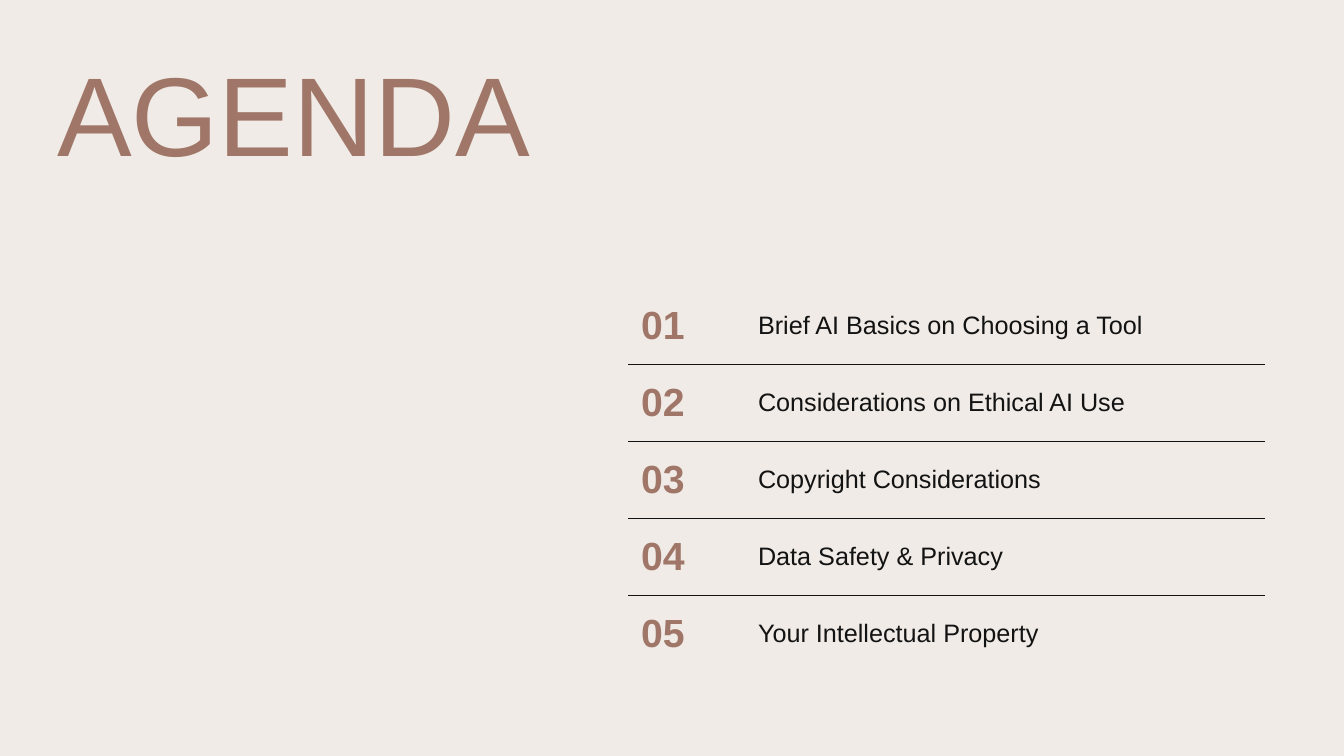
from lxml import etree
from pptx import Presentation
from pptx.dml.color import RGBColor
from pptx.enum.text import MSO_ANCHOR as Anchor
from pptx.oxml.ns import qn
from pptx.util import Pt

CREAM = RGBColor(0xF0, 0xEB, 0xE6)
CLAY = RGBColor(0x9F, 0x76, 0x67)
INK = RGBColor(0x13, 0x13, 0x13)
FONT = "Arial"

TOPICS = [
    "Brief AI Basics on Choosing a Tool",
    "Considerations on Ethical AI Use",
    "Copyright Considerations",
    "Data Safety & Privacy",
    "Your Intellectual Property",
]


def add_text(paragraph, text, size, color, bold=False):
    run = paragraph.add_run()
    run.text = text
    run.font.name = FONT
    run.font.size = Pt(size)
    run.font.bold = bold
    run.font.color.rgb = color


def set_borders(cell, ruled_sides):
    """Rule the given sides (T, B) and clear the others."""
    properties = cell._tc.get_or_add_tcPr()
    for position, side in enumerate("LRTB"):
        border = etree.Element(qn(f"a:ln{side}"), w=str(Pt(0.5)))
        if side in ruled_sides:
            fill = etree.SubElement(border, qn("a:solidFill"))
            etree.SubElement(fill, qn("a:srgbClr"), val=str(INK))
        else:
            etree.SubElement(border, qn("a:noFill"))
        properties.insert(position, border)


def add_title(slide, left, top, width, height):
    frame = slide.shapes.add_textbox(Pt(left), Pt(top), Pt(width), Pt(height)).text_frame
    frame.word_wrap = True
    frame.vertical_anchor = Anchor.TOP
    frame.margin_top = Pt(10)
    heading = frame.paragraphs[0]
    heading.line_spacing = 0.9
    add_text(heading, "AGENDA", 80, CLAY)


def add_agenda(slide, left, top, width, height):
    agenda = slide.shapes.add_table(
        len(TOPICS), 2, Pt(left), Pt(top), Pt(width), Pt(height)).table
    agenda.first_row = agenda.horz_banding = False
    number_width = 83.5
    agenda.columns[0].width = Pt(number_width)
    agenda.columns[1].width = Pt(width - number_width)

    for index, topic in enumerate(TOPICS):
        agenda.rows[index].height = Pt(height / len(TOPICS))
        # Rules run only between rows
        ruled_sides = ("T" if index > 0 else "") + ("B" if index < len(TOPICS) - 1 else "")
        entries = [(f"{index + 1:02}", 28, CLAY, True), (topic, 18, INK, False)]
        for column, entry in enumerate(entries):
            cell = agenda.cell(index, column)
            cell.vertical_anchor = Anchor.MIDDLE
            cell.margin_left = cell.margin_right = Pt(9.36)
            cell.margin_top = cell.margin_bottom = Pt(9.36)
            cell.fill.background()
            set_borders(cell, ruled_sides)
            add_text(cell.text_frame.paragraphs[0], *entry)


def main():
    deck = Presentation()
    deck.slide_width, deck.slide_height = Pt(960), Pt(540)
    slide = deck.slides.add_slide(deck.slide_layouts[6])
    slide.background.fill.solid()
    slide.background.fill.fore_color.rgb = CREAM
    add_title(slide, 33.84, 32.4, 870, 144)
    add_agenda(slide, 448.6, 205.2, 455, 275)
    deck.save("out.pptx")


if __name__ == "__main__":
    main()
